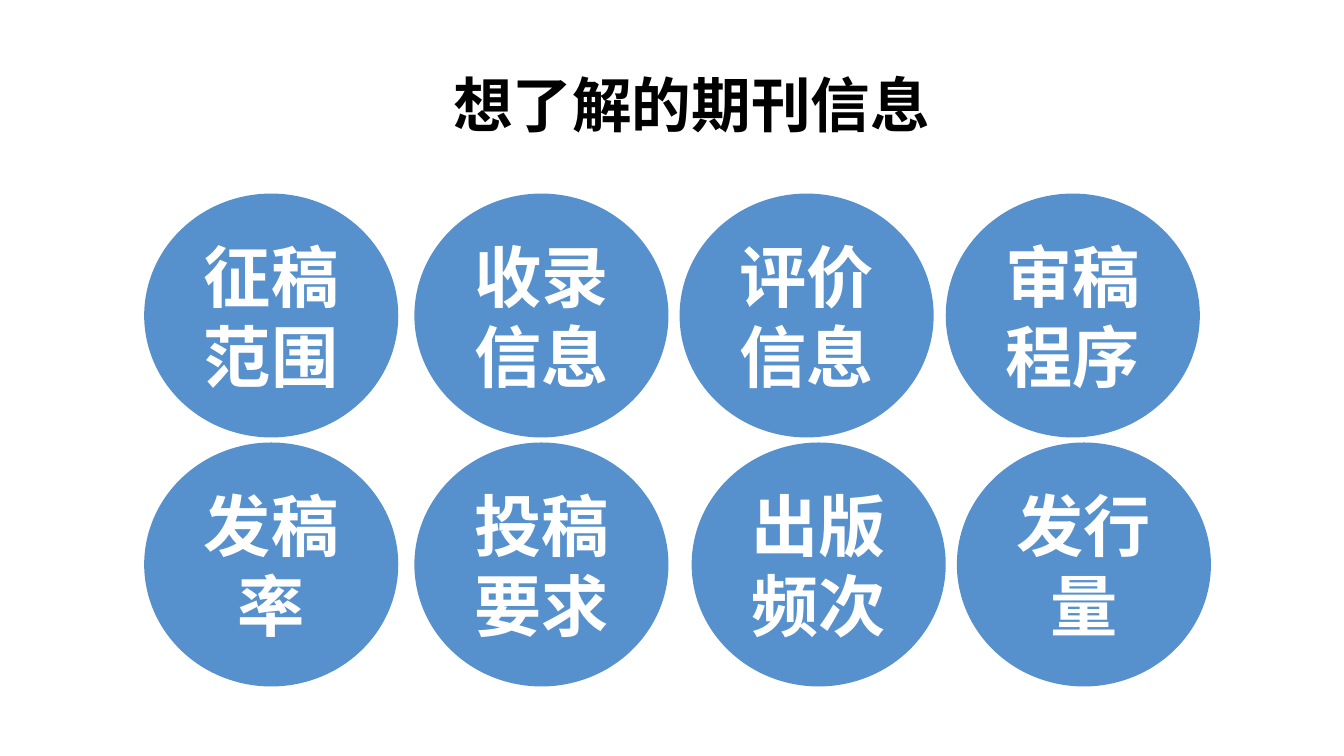
from dataclasses import dataclass
from lxml.etree import SubElement
from pptx import Presentation
from pptx.dml.color import RGBColor as RGB
from pptx.enum.shapes import MSO_SHAPE as Shape
from pptx.enum.text import MSO_ANCHOR as Anchor, PP_ALIGN as Align
from pptx.oxml.ns import qn
from pptx.util import Inches, Pt


@dataclass
class Theme:
    font: str = "Noto Sans CJK SC"
    blue: RGB = RGB(0x57, 0x91, 0xCD)
    white: RGB = RGB(0xFF, 0xFF, 0xFF)
    black: RGB = RGB(0, 0, 0)
    head: float = 42.6
    label: float = 48


class Deck:
    def __init__(self, theme, slide):
        self.theme = theme
        self.slide = slide

    def letter(self, frame, text, size, color):
        frame.word_wrap = True
        frame.text = text
        for para in frame.paragraphs:
            para.alignment = Align.CENTER
            font = para.font
            font.size, font.bold = Pt(size), True
            font.color.rgb = color
            font.name = self.theme.font
            # East Asian typeface
            props = para._p.pPr.find(qn("a:defRPr"))
            SubElement(props, qn("a:ea"), typeface=self.theme.font)

    def title(self, text, *box):
        frame = self.slide.shapes.add_textbox(*map(Inches, box)).text_frame
        self.letter(frame, text, self.theme.head, self.theme.black)

    def disc(self, text, *box):
        disc = self.slide.shapes.add_shape(Shape.OVAL, *map(Inches, box))
        disc.shadow.inherit = False
        disc.fill.solid()
        disc.fill.fore_color.rgb = self.theme.blue
        disc.line.fill.background()
        disc.text_frame.vertical_anchor = Anchor.MIDDLE
        self.letter(disc.text_frame, text, self.theme.label, self.theme.white)


def main():
    show = Presentation()
    show.slide_width, show.slide_height = Inches(13.33), Inches(7.5)
    deck = Deck(Theme(), show.slides.add_slide(show.slide_layouts[6]))

    # Heading
    deck.title("想了解的期刊信息", 3.1, 0.62, 7.52, 0.82)

    # Two rows of discs: top, left edges, labels
    rows = [
        (1.92, (1.43, 4.11, 6.74, 9.38),
         ("征稿\n范围", "收录信息", "评价信息", "审稿程序")),
        (4.39, (1.43, 4.11, 6.86, 9.49),
         ("发稿率", "投稿要求", "出版频次", "发行量")),
    ]
    for top, lefts, labels in rows:
        for left, label in zip(lefts, labels):
            deck.disc(label, left, top, 2.52, 2.42)

    show.save("out.pptx")


if __name__ == "__main__":
    main()
